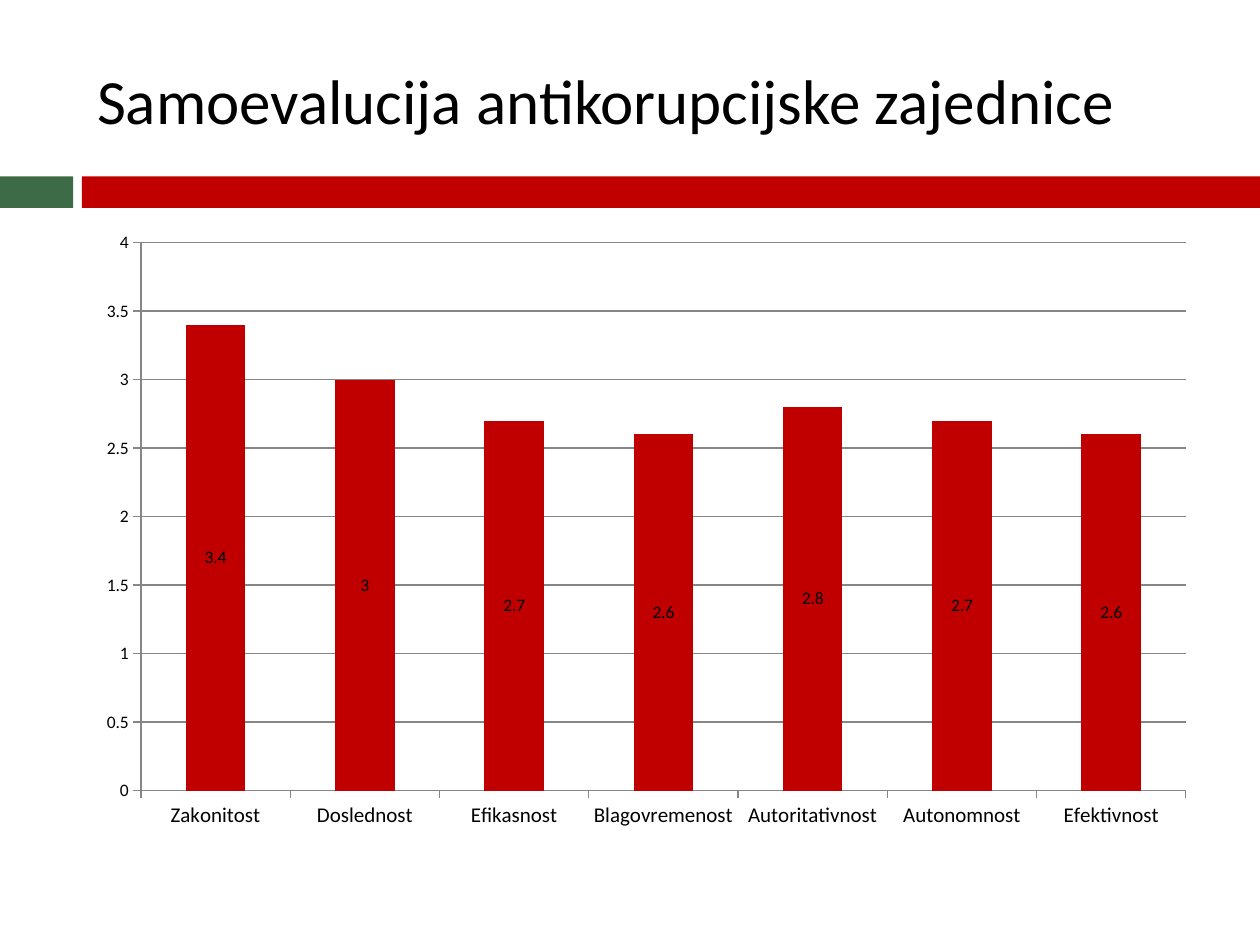
import pptx
import pptx.util
import pptx.chart.data
import pptx.dml.color
import pptx.enum.chart
import pptx.enum.shapes
import pptx.enum.text

Pt = pptx.util.Pt
FONT = "Calibri"
COLORS = {"text": "000000", "green": "3D6B48", "red": "C00000", "line": "868686"}


def rgb(name):
    return pptx.dml.color.RGBColor.from_string(COLORS[name])


def write(frame, text, size=12, color="text", align=pptx.enum.text.PP_ALIGN.LEFT):
    frame.text = text
    par = frame.paragraphs[0]
    par.alignment = align
    par.font.name = FONT
    par.font.size = Pt(size)
    par.font.color.rgb = rgb(color)


deck = pptx.Presentation()
deck.slide_width = pptx.util.Inches(10)
deck.slide_height = pptx.util.Inches(7.5)
wide = deck.slide_width
inch = wide // 10
left, span = int(0.67 * inch), int(8.92 * inch)
slide = deck.slides.add_slide(deck.slide_layouts[5])

# Two-colour band under the title
for start, end, color in [(0, 0.58, "green"), (0.65, 10, "red")]:
    band = slide.shapes.add_shape(
        pptx.enum.shapes.MSO_SHAPE.RECTANGLE,
        int(start * inch), int(1.4 * inch), int((end - start) * inch), int(0.25 * inch))
    band.shadow.inherit = False
    band.fill.solid()
    band.fill.fore_color.rgb = rgb(color)
    band.line.fill.background()

title = slide.shapes.title
title.left, title.top = left, int(0.25 * inch)
title.width, title.height = span, int(1.08 * inch)
title.text_frame.vertical_anchor = pptx.enum.text.MSO_ANCHOR.MIDDLE
write(title.text_frame, "Samoevalucija antikorupcijske zajednice", size=36)

# Scores by principle
scores = {
    "Zakonitost": 3.4,
    "Doslednost": 3,
    "Efikasnost": 2.7,
    "Blagovremenost": 2.6,
    "Autoritativnost": 2.8,
    "Autonomnost": 2.7,
    "Efektivnost": 2.6,
}
data = pptx.chart.data.CategoryChartData()
data.categories = list(scores)
data.add_series("Series 1", list(scores.values()))
chart = slide.shapes.add_chart(
    pptx.enum.chart.XL_CHART_TYPE.COLUMN_STACKED,
    left, int(1.75 * inch), span, int(4.92 * inch), data).chart
chart.has_legend = False
chart.has_title = False
chart.font.name = FONT
chart.font.size = Pt(10)
chart.font.color.rgb = rgb("text")

plot = chart.plots[0]
plot.gap_width = 150
plot.overlap = 100
plot.vary_by_categories = False
bars = plot.series[0]
bars.format.fill.solid()
bars.format.fill.fore_color.rgb = rgb("red")
labels = bars.data_labels
labels.show_value = True
labels.position = pptx.enum.chart.XL_LABEL_POSITION.CENTER
labels.font.name = FONT
labels.font.size = Pt(10)
labels.font.color.rgb = rgb("text")

scale = chart.value_axis
scale.minimum_scale, scale.maximum_scale, scale.major_unit = 0, 4, 0.5
scale.has_major_gridlines = True
scale.major_gridlines.format.line.color.rgb = rgb("line")
scale.major_gridlines.format.line.width = Pt(0.75)
for axis, size in [(chart.category_axis, 12), (scale, 10)]:
    axis.major_tick_mark = pptx.enum.chart.XL_TICK_MARK.OUTSIDE
    axis.format.line.color.rgb = rgb("line")
    axis.format.line.width = Pt(0.75)
    axis.tick_labels.font.name = FONT
    axis.tick_labels.font.size = Pt(size)
    axis.tick_labels.font.color.rgb = rgb("text")

deck.save("out.pptx")
